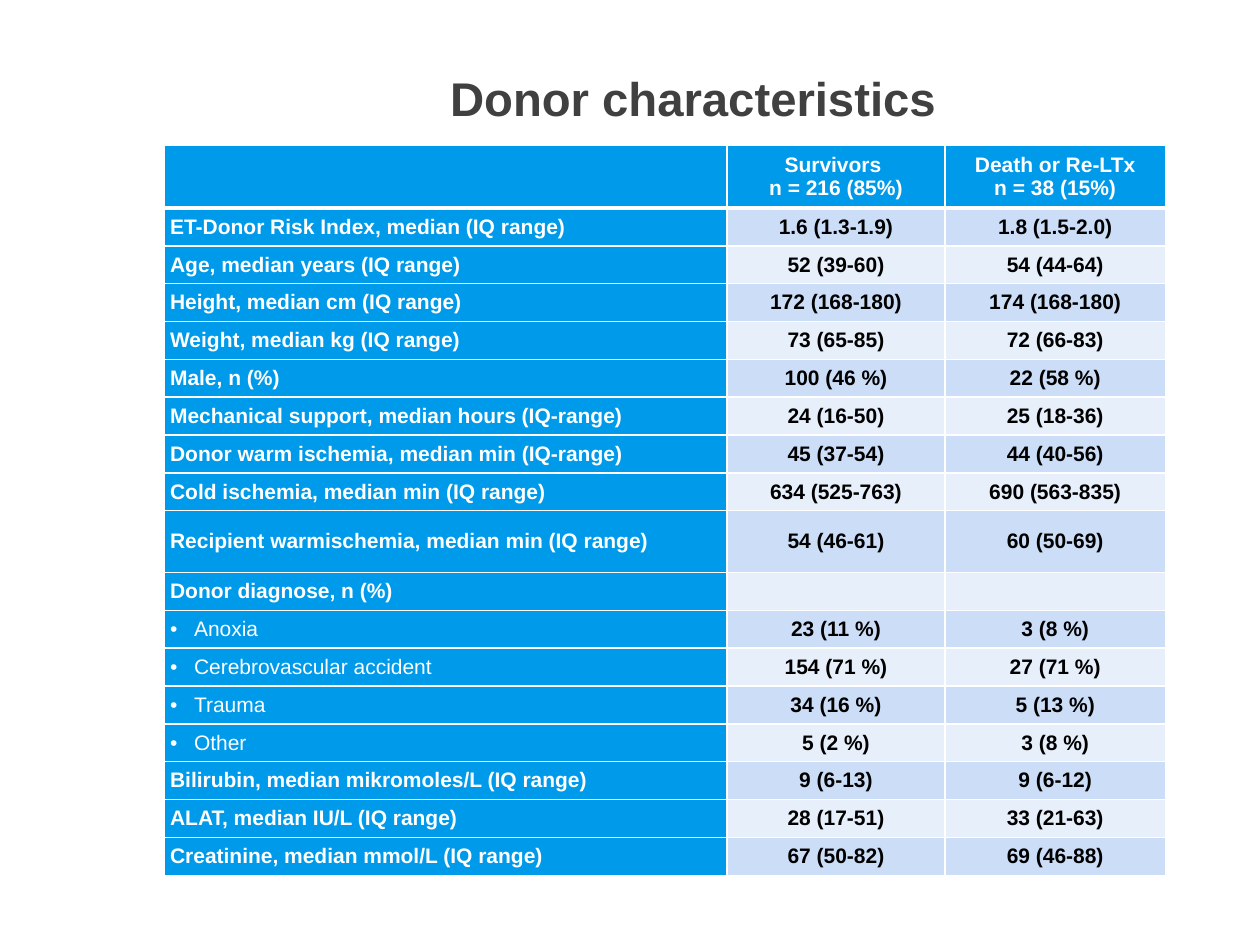
from lxml import etree
from pptx import Presentation
from pptx.dml.color import RGBColor
from pptx.enum.text import MSO_ANCHOR, PP_ALIGN
from pptx.oxml.ns import qn
from pptx.util import Inches, Pt

BLUE = RGBColor(0x00, 0x9A, 0xEB)
BAND_DARK = RGBColor(0xCC, 0xDE, 0xF7)
BAND_LIGHT = RGBColor(0xE7, 0xEF, 0xFB)
WHITE = RGBColor(0xFF, 0xFF, 0xFF)
BLACK = RGBColor(0x00, 0x00, 0x00)
GRAY = RGBColor(0x40, 0x40, 0x40)

ROWS = [
    ("", "Survivors \vn = 216 (85%)", "Death or Re-LTx\nn = 38 (15%)"),
    ("ET-Donor Risk Index, median (IQ range)", "1.6 (1.3-1.9)", "1.8 (1.5-2.0)"),
    ("Age, median years (IQ range)", "52 (39-60)", "54 (44-64)"),
    ("Height, median cm (IQ range)", "172 (168-180)", "174 (168-180)"),
    ("Weight, median kg (IQ range)", "73 (65-85)", "72 (66-83)"),
    ("Male, n (%)", "100 (46 %)", "22 (58 %)"),
    ("Mechanical support, median hours (IQ-range)", "24 (16-50)", "25 (18-36)"),
    ("Donor warm ischemia, median min (IQ-range)", "45 (37-54)", "44 (40-56)"),
    ("Cold ischemia, median min (IQ range)", "634 (525-763)", "690 (563-835)"),
    ("Recipient warmischemia, median min (IQ range)", "54 (46-61)", "60 (50-69)"),
    ("Donor diagnose, n (%)", "", ""),
    ("Anoxia", "23 (11 %)", "3 (8 %)"),
    ("Cerebrovascular accident", "154 (71 %)", "27 (71 %)"),
    ("Trauma", "34 (16 %)", "5 (13 %)"),
    ("Other", "5 (2 %)", "3 (8 %)"),
    ("Bilirubin, median mikromoles/L (IQ range)", "9 (6-13)", "9 (6-12)"),
    ("ALAT, median IU/L (IQ range)", "28 (17-51)", "33 (21-63)"),
    ("Creatinine, median mmol/L (IQ range)", "67 (50-82)", "69 (46-88)"),
]
DIAGNOSES = ("Anoxia", "Cerebrovascular accident", "Trauma", "Other")
TALL_ROWS = (0, 9)
COLUMN_WIDTHS = (4.47, 1.73, 1.75)


def write_text(frame, text, size=12, color=BLACK, bold=True,
               align=PP_ALIGN.CENTER, bullet=False, line_spacing=None):
    frame.text = text
    for paragraph in frame.paragraphs:
        paragraph.alignment = align
        if line_spacing:
            paragraph.line_spacing = line_spacing
        if bullet:
            properties = paragraph._p.get_or_add_pPr()
            properties.set("marL", str(Inches(0.19)))
            properties.set("indent", str(-Inches(0.19)))
            etree.SubElement(properties, qn("a:buFont"), typeface="Arial")
            etree.SubElement(properties, qn("a:buChar"), char="•")
        for run in paragraph.runs:
            run.font.name = "Arial"
            run.font.size = Pt(size)
            run.font.bold = bold
            run.font.color.rgb = color
        if not text:
            # Keeps an empty cell from growing to the default text size
            etree.SubElement(paragraph._p, qn("a:endParaRPr"), sz=str(size * 100))


def set_borders(cell, widths):
    properties = cell._tc.get_or_add_tcPr()
    for position, (side, width) in enumerate(widths.items()):
        line = etree.Element(qn(f"a:{side}"), w=str(Pt(width)))
        fill = etree.SubElement(line, qn("a:solidFill"))
        etree.SubElement(fill, qn("a:srgbClr"), val=str(WHITE))
        properties.insert(position, line)


presentation = Presentation()
presentation.slide_width = Inches(10)
presentation.slide_height = Inches(7.5)
slide = presentation.slides.add_slide(presentation.slide_layouts[6])

# Title
title = slide.shapes.add_textbox(Inches(1.54), Inches(0.6), Inches(7.92), Inches(0.83))
frame = title.text_frame
frame.word_wrap = True
frame.margin_left = frame.margin_right = frame.margin_top = frame.margin_bottom = 0
write_text(frame, "Donor characteristics", size=27, color=GRAY, line_spacing=0.9)

# Table grid
row_heights = [0.49 if row in TALL_ROWS else 0.3 for row in range(len(ROWS))]
table = slide.shapes.add_table(
    len(ROWS), len(COLUMN_WIDTHS), Inches(1.3), Inches(1.15),
    Inches(sum(COLUMN_WIDTHS)), Inches(sum(row_heights))).table
for column, width in zip(table.columns, COLUMN_WIDTHS):
    column.width = Inches(width)
for row, height in zip(table.rows, row_heights):
    row.height = Inches(height)

# Table cells: blue header and labels, banded values
for row_index, values in enumerate(ROWS):
    band = BAND_DARK if row_index % 2 else BAND_LIGHT
    for column_index, text in enumerate(values):
        cell = table.cell(row_index, column_index)
        is_label = column_index == 0
        is_blue = is_label or row_index == 0
        is_diagnosis = text in DIAGNOSES
        cell.vertical_anchor = MSO_ANCHOR.MIDDLE
        cell.margin_left = cell.margin_right = Inches(0.05)
        cell.margin_top = cell.margin_bottom = Inches(0.05)
        cell.fill.solid()
        cell.fill.fore_color.rgb = BLUE if is_blue else band
        set_borders(cell, {"lnL": 1, "lnR": 1,
                           "lnT": 3 if row_index == 1 else 1,
                           "lnB": 3 if row_index == 0 else 1})
        write_text(cell.text_frame, text, color=WHITE if is_blue else BLACK,
                   bold=not is_diagnosis, bullet=is_diagnosis,
                   align=PP_ALIGN.LEFT if is_label else PP_ALIGN.CENTER)

presentation.save("out.pptx")
